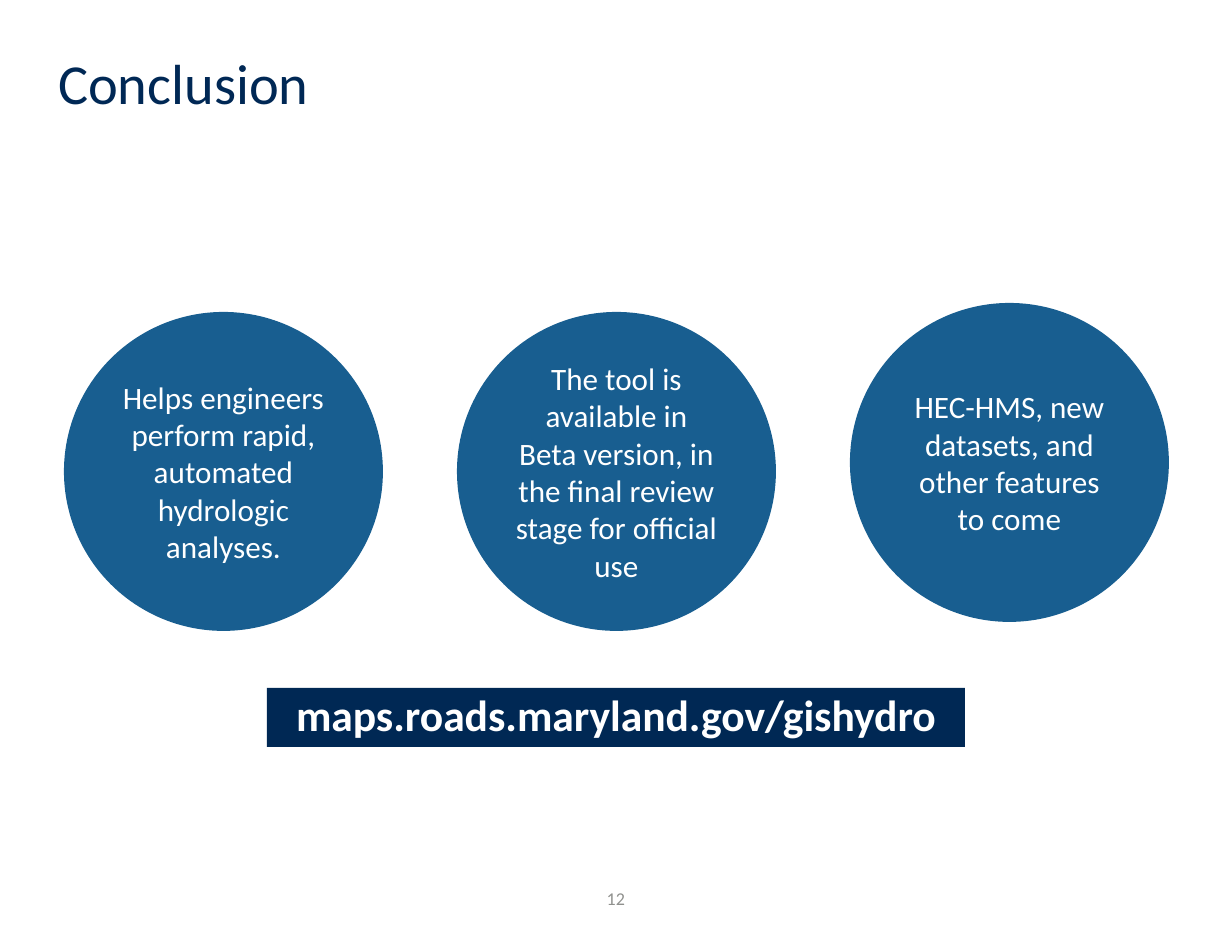
from pptx import Presentation
from pptx import util as u
from pptx.dml.color import RGBColor
from pptx.enum import shapes, text

PX = 914400 // 112  # slide is laid out at 112 px to the inch


def write(shape, words, size, color, bold=False, align="CENTER", anchor="MIDDLE", spacing=1.0):
    frame = shape.text_frame
    frame.word_wrap = True
    frame.vertical_anchor = text.MSO_ANCHOR[anchor]
    frame.text = words
    paragraph = frame.paragraphs[0]
    paragraph.alignment = text.PP_ALIGN[align]
    paragraph.line_spacing = spacing
    for run in paragraph.runs:
        run.font.name = "Calibri"
        run.font.size = u.Pt(size)
        run.font.bold = bold
        run.font.color.rgb = RGBColor.from_string(color)


def add_filled(kind, left, top, width, height, fill):
    shape = slide.shapes.add_shape(kind, left * PX, top * PX, width * PX, height * PX)
    shape.shadow.inherit = False
    shape.fill.solid()
    shape.fill.fore_color.rgb = RGBColor.from_string(fill)
    shape.line.fill.background()
    return shape


presentation = Presentation()
presentation.slide_width = u.Inches(11)
presentation.slide_height = u.Inches(8.5)
slide = presentation.slides.add_slide(presentation.slide_layouts[6])

# Title
title = slide.shapes.add_textbox(47 * PX, 50 * PX, 970 * PX, 101 * PX)
write(title, "Conclusion", 36.3, "002855", align="LEFT", anchor="TOP", spacing=0.9)

# Page number
page_number = slide.shapes.add_textbox(477 * PX, 882 * PX, 278 * PX, 50 * PX)
write(page_number, "12", 11.6, "90918E", anchor="TOP")

# Three circles at an equal pitch, the last slightly raised
DIAMETER, PITCH = 319, 393
circles = [
    (312, "Helps engineers perform rapid, automated hydrologic analyses."),
    (312, "The tool is\vavailable in Beta version, in the final review stage for official use"),
    (303, "HEC-HMS, new datasets, and other features to come"),
]
for index, (top, words) in enumerate(circles):
    circle = add_filled(shapes.MSO_SHAPE.OVAL, 64 + index * PITCH, top, DIAMETER, DIAMETER, "185E90")
    write(circle, words, 20, "FFFFFF")

# Web address banner
banner = add_filled(shapes.MSO_SHAPE.ROUNDED_RECTANGLE, 267, 688, 698, 59, "002854")
banner.adjustments[0] = 0
write(banner, "maps.roads.maryland.gov/gishydro", 28, "FFFFFF", bold=True, spacing=0.9)

presentation.save("out.pptx")
